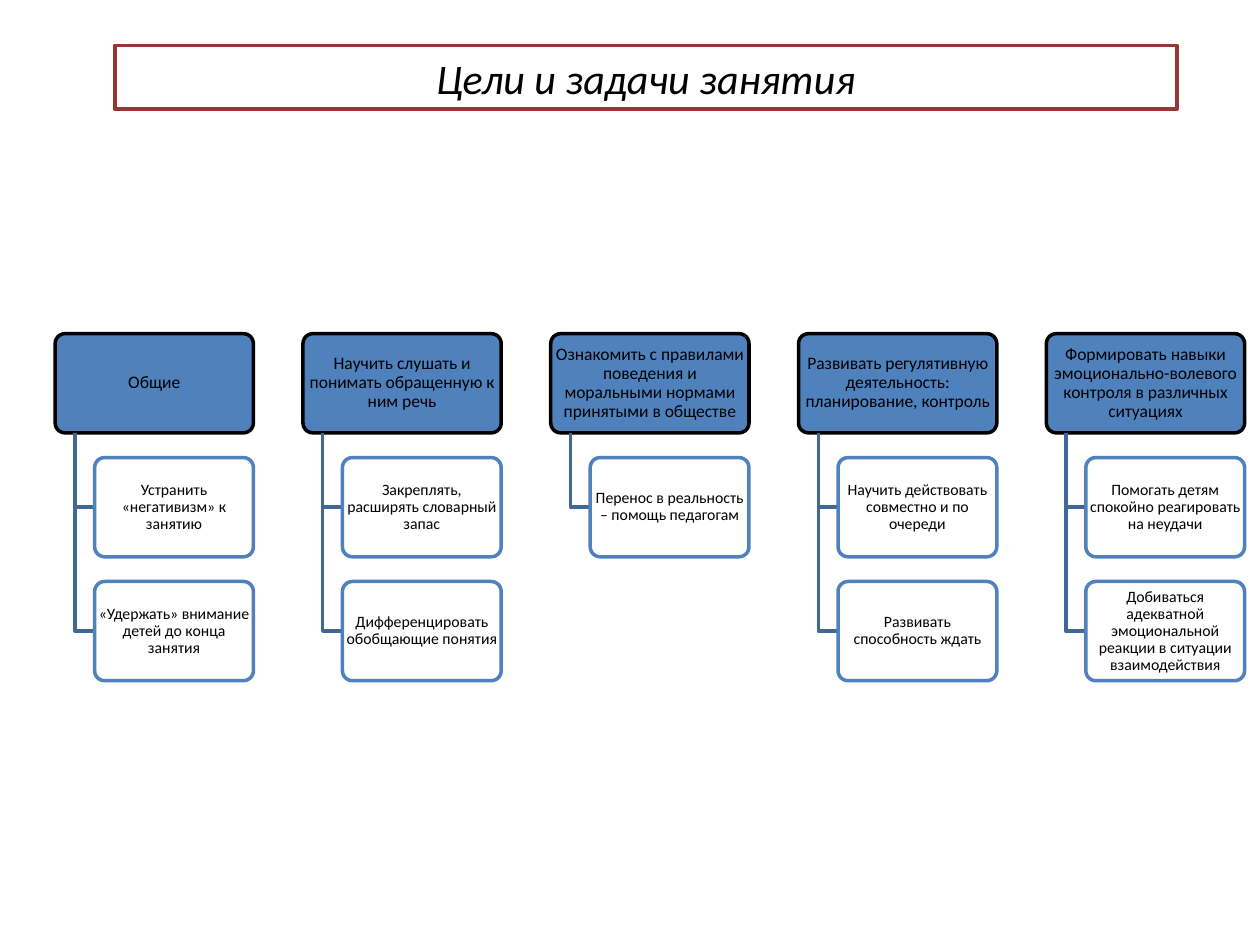
from pptx import Presentation
from pptx.dml.color import RGBColor
from pptx.enum.shapes import MSO_SHAPE as Shape
from pptx.enum.text import MSO_ANCHOR as Anchor, MSO_AUTO_SIZE as AutoSize, PP_ALIGN as Align
from pptx.util import Pt

BLACK = RGBColor(0x00, 0x00, 0x00)
WHITE = RGBColor(0xFF, 0xFF, 0xFF)
BLUE = RGBColor(0x4F, 0x81, 0xBD)
DARK_BLUE = RGBColor(0x3F, 0x67, 0x97)
DARK_RED = RGBColor(0x95, 0x37, 0x35)

LEFT, TOP = 31.5, 190.7
COLUMN_STEP, ROW_STEP = 141.6, 70.8
GOAL_WIDTH, TASK_WIDTH, BOX_HEIGHT = 113.3, 90.7, 56.7
TASK_INDENT = GOAL_WIDTH - TASK_WIDTH

GOALS = [
    ("Общие",
     ["Устранить «негативизм» к занятию",
      "«Удержать» внимание детей до конца занятия"]),
    ("Научить слушать и понимать обращенную к ним речь",
     ["Закреплять, расширять словарный запас",
      "Дифференцировать обобщающие понятия"]),
    ("Ознакомить с правилами поведения и моральными нормами принятыми в обществе",
     ["Перенос в реальность – помощь педагогам"]),
    ("Развивать регулятивную деятельность: планирование, контроль",
     ["Научить действовать совместно и по очереди",
      "Развивать способность ждать"]),
    ("Формировать навыки эмоционально-волевого контроля в различных ситуациях",
     ["Помогать детям спокойно реагировать на неудачи",
      "Добиваться адекватной эмоциональной реакции в ситуации взаимодействия"]),
]

deck = Presentation()
deck.slide_width, deck.slide_height = Pt(720), Pt(540)
page = deck.slides.add_slide(deck.slide_layouts.get_by_name("Title Only"))


def write(frame, text, size, italic=False, spacing=1.0):
    frame.word_wrap = True
    frame.vertical_anchor = Anchor.MIDDLE
    para = frame.paragraphs[0]
    para.alignment = Align.CENTER
    para.line_spacing = spacing
    span = para.add_run()
    span.text = text
    span.font.name = "Calibri"
    span.font.size = Pt(size)
    span.font.italic = italic
    span.font.color.rgb = BLACK


def add_box(text, left, top, width, size, fill, line):
    box = page.shapes.add_shape(
        Shape.ROUNDED_RECTANGLE, Pt(left), Pt(top), Pt(width), Pt(BOX_HEIGHT))
    box.adjustments[0] = 0.1
    box.shadow.inherit = False
    box.fill.solid()
    box.fill.fore_color.rgb = fill
    box.line.color.rgb = line
    box.line.width = Pt(2)
    frame = box.text_frame
    frame.margin_left = frame.margin_right = frame.margin_top = frame.margin_bottom = 0
    write(frame, text, size, spacing=0.9)


title = page.shapes.title
title.left, title.top, title.width, title.height = Pt(65.5), Pt(26), Pt(607), Pt(36.3)
title.fill.solid()
title.fill.fore_color.rgb = WHITE
title.line.color.rgb = DARK_RED
title.line.width = Pt(2.25)
title.text_frame.auto_size = AutoSize.NONE
write(title.text_frame, "Цели и задачи занятия", 24, italic=True)

for column, (goal, tasks) in enumerate(GOALS):
    left = LEFT + column * COLUMN_STEP
    add_box(goal, left, TOP, GOAL_WIDTH, 10, BLUE, BLACK)
    trunk = left + TASK_INDENT / 2
    task_left = left + TASK_INDENT
    for row, task in enumerate(tasks, start=1):
        task_top = TOP + row * ROW_STEP
        middle = task_top + BOX_HEIGHT / 2
        builder = page.shapes.build_freeform(Pt(trunk), Pt(TOP + BOX_HEIGHT))
        builder.add_line_segments(
            [(Pt(trunk), Pt(middle)), (Pt(task_left), Pt(middle))], close=False)
        elbow = builder.convert_to_shape()
        elbow.shadow.inherit = False
        elbow.fill.background()
        elbow.line.color.rgb = DARK_BLUE
        elbow.line.width = Pt(2)
        add_box(task, task_left, task_top, TASK_WIDTH, 9, WHITE, BLUE)

deck.save("out.pptx")
